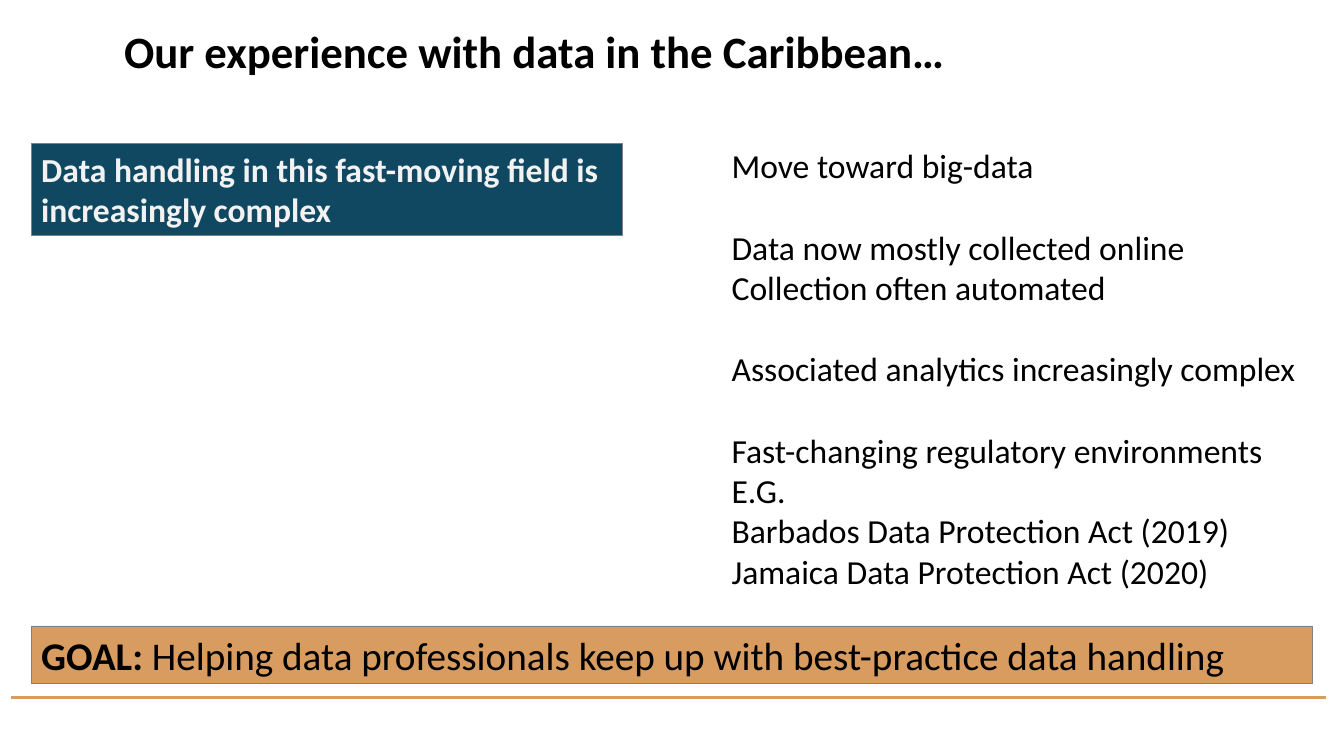
from pptx import Presentation
from pptx.dml.color import RGBColor
from pptx.enum.shapes import MSO_CONNECTOR, MSO_SHAPE
from pptx.enum.text import MSO_ANCHOR, MSO_AUTO_SIZE, PP_ALIGN
from pptx.oxml.ns import qn
from pptx.util import Pt
from lxml.etree import SubElement

BLACK = RGBColor(0, 0, 0)
PALE = RGBColor(0xF2, 0xF2, 0xF2)
GREY = RGBColor(0x80, 0x80, 0x80)
TEAL = RGBColor(0x10, 0x48, 0x62)
SAND = RGBColor(0xD8, 0x9C, 0x60)

EDGE = 22.3
GAP = 29.3

# Each group is set apart from the one before by one line
TRENDS = [
    ["Move toward big-data"],
    ["Data now mostly collected online", "Collection often automated"],
    ["Associated analytics increasingly complex"],
    ["Fast-changing regulatory environments", "E.G.",
     "Barbados Data Protection Act (2019)", "Jamaica Data Protection Act (2020)"],
]


class Board:
    def __init__(self, deck):
        self.slide = deck.slides.add_slide(deck.slide_layouts[5])
        self.shapes = self.slide.shapes
        self.frame = {"word_wrap": True, "auto_size": MSO_AUTO_SIZE.NONE,
                      "vertical_anchor": MSO_ANCHOR.TOP}
        self.font = {"name": "Calibri", "bold": False}

    def label(self, shape, lines, size, color=BLACK):
        """Fill the shape; each line is (space before, [(text, bold), ...])."""
        frame = shape.text_frame
        for key, value in self.frame.items():
            setattr(frame, key, value)
        style = self.font | {"size": Pt(size)}
        for i, (space, runs) in enumerate(lines):
            para = frame.add_paragraph() if i else frame.paragraphs[0]
            form = {"alignment": PP_ALIGN.LEFT, "space_before": Pt(space),
                    "line_spacing": 1.0}
            for key, value in form.items():
                setattr(para, key, value)
            for text, heavy in runs:
                run = para.add_run()
                run.text = text
                for key, value in (style | {"bold": heavy}).items():
                    setattr(run.font, key, value)
                run.font.color.rgb = color

    def title(self, text, box):
        head = self.shapes.title
        for key, value in zip(("left", "top", "width", "height"), box):
            setattr(head, key, Pt(value))
        self.label(head, [(0, [(text, True)])], 32)

    def text(self, lines, box, size):
        self.label(self.shapes.add_textbox(*map(Pt, box)), lines, size)

    def panel(self, runs, box, size, fill, color):
        shape = self.shapes.add_shape(MSO_SHAPE.RECTANGLE, *map(Pt, box))
        shape.shadow.inherit = False
        shape.fill.solid()
        shape.fill.fore_color.rgb = fill
        shape.line.color.rgb = GREY
        shape.line.width = Pt(0.5)
        self.label(shape, [(0, runs)], size, color)

    def rule(self, left, right, y):
        line = self.shapes.add_connector(
            MSO_CONNECTOR.STRAIGHT, Pt(left), Pt(y), Pt(right), Pt(y))
        line.line.color.rgb = SAND
        line.line.width = Pt(1.5)
        SubElement(line._element.spPr, qn("a:effectLst"))


def main():
    deck = Presentation()
    deck.slide_width, deck.slide_height = Pt(960), Pt(540)
    board = Board(deck)
    board.rule(8, 947, 498.2)
    board.panel([("Data handling in this fast-moving field is increasingly complex", True)],
                (EDGE, 102.5, 422.6, 65.5), 24, TEAL, PALE)
    lines = [(GAP if g and not i else 0, [(text, False)])
             for g, group in enumerate(TRENDS) for i, text in enumerate(group)]
    board.text(lines, (515.5, 100.1, 422.6, 326.9), 24)
    board.title("Our experience with data in the Caribbean…", (81.4, 13, 761.8, 46.1))
    board.panel([("GOAL: ", True),
                 ("Helping data professionals keep up with best-practice data handling", False)],
                (EDGE, 447.1, 915.1, 41.2), 28, SAND, BLACK)
    deck.save("out.pptx")


if __name__ == "__main__":
    main()
